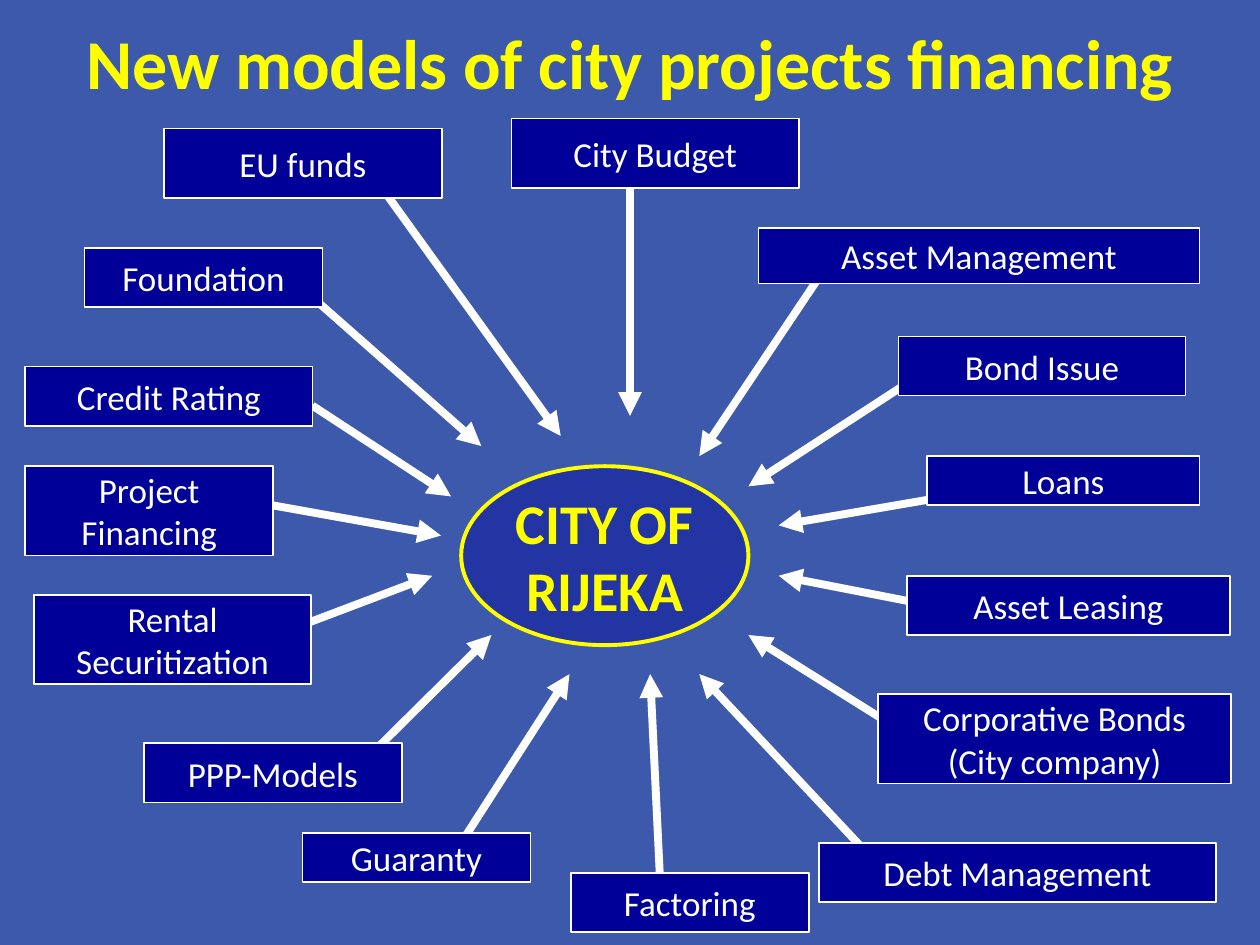
from lxml.etree import SubElement
from pptx import Presentation
from pptx.dml.color import RGBColor
from pptx.enum.shapes import MSO_CONNECTOR, MSO_SHAPE
from pptx.enum.text import MSO_ANCHOR, PP_ALIGN
from pptx.oxml.ns import qn
from pptx.util import Inches, Pt

BLUE = RGBColor(0x3D, 0x59, 0xAB)
NAVY = RGBColor(0x00, 0x00, 0x99)
WHITE = RGBColor(0xFF, 0xFF, 0xFF)
YELLOW = RGBColor(0xFF, 0xFF, 0x00)

TITLE = "New models of city projects financing"
CITY = "CITY OF\nRIJEKA"

# name, box (left, top, width, height), arrow start, arrow end
SOURCES = [
    ("City Budget", (4.06, 0.94, 2.28, 0.55), (5, 1.41), (5, 3.3)),
    ("Asset Management", (6.02, 1.81, 3.5, 0.44), (6.5, 2.2), (5.55, 3.62)),
    ("Bond Issue", (7.13, 2.67, 2.28, 0.47), (7.28, 2.99), (5.94, 3.86)),
    ("Loans", (7.36, 3.62, 2.16, 0.39), (7.52, 3.94), (6.18, 4.17)),
    ("Asset Leasing", (7.2, 4.57, 2.56, 0.47), (7.36, 4.8), (6.18, 4.57)),
    ("Corporative Bonds\n(City company)", (6.97, 5.51, 2.8, 0.71), (7.44, 5.98), (5.94, 5.04)),
    ("Debt Management", (6.5, 6.69, 3.15, 0.47), (7.05, 6.95), (5.55, 5.35)),
    ("Factoring", (4.53, 6.93, 1.89, 0.47), (5.24, 7.01), (5.16, 5.35)),
    ("Guaranty", (2.4, 6.61, 1.81, 0.39), (3.66, 6.69), (4.52, 5.35)),
    ("PPP-Models", (1.14, 5.9, 2.05, 0.47), (2.87, 6.06), (3.9, 5.04)),
    ("Rental\nSecuritization", (0.27, 4.72, 2.2, 0.71), (2.4, 4.96), (3.43, 4.57)),
    ("Project\nFinancing", (0.2, 3.7, 1.97, 0.71), (2.16, 4.01), (3.5, 4.25)),
    ("Credit Rating", (0.2, 2.91, 2.28, 0.47), (2.48, 3.22), (3.58, 3.94)),
    ("Foundation", (0.67, 1.97, 1.89, 0.47), (2.48, 2.36), (3.82, 3.54)),
    ("EU funds", (1.3, 1.02, 2.21, 0.55), (3.03, 1.49), (4.45, 3.46)),
]

HEAD = {"name": "Calibri", "size": Pt(40), "bold": True}
HUB = {"name": "Calibri", "size": Pt(32), "bold": True}
LABEL = {"name": "Calibri", "size": Pt(20), "bold": False}


def write(shape, text, style, color, wrap=False):
    frame = shape.text_frame
    frame.text = text
    frame.word_wrap = wrap
    frame.vertical_anchor = MSO_ANCHOR.MIDDLE
    for para in frame.paragraphs:
        para.alignment = PP_ALIGN.CENTER
        for key, value in style.items():
            setattr(para.font, key, value)
        para.font.color.rgb = color


def add_box(slide, kind, place, edge, width):
    shape = slide.shapes.add_shape(kind, *map(Inches, place))
    shape.shadow.inherit = False
    shape.fill.solid()
    shape.fill.fore_color.rgb = NAVY
    shape.line.color.rgb = edge
    shape.line.width = Pt(width)
    return shape


def add_arrow(slide, start, end):
    arrow = slide.shapes.add_connector(
        MSO_CONNECTOR.STRAIGHT, *map(Inches, start + end))
    arrow.line.color.rgb = WHITE
    arrow.line.width = Pt(4.5)
    SubElement(arrow.line._get_or_add_ln(), qn("a:tailEnd"), type="triangle")
    SubElement(arrow._element.spPr, qn("a:effectLst"))


def main():
    deck = Presentation()
    deck.slide_width, deck.slide_height = Inches(10), Inches(7.5)
    slide = deck.slides.add_slide(deck.slide_layouts[6])
    slide.background.fill.solid()
    slide.background.fill.fore_color.rgb = BLUE

    title = slide.shapes.add_textbox(*map(Inches, (0.5, 0.19, 9, 0.6)))
    write(title, TITLE, HEAD, YELLOW, wrap=True)

    city = add_box(slide, MSO_SHAPE.OVAL, (3.66, 3.7, 2.28, 1.42), YELLOW, 2.25)
    tint = city._element.spPr.find(qn("a:solidFill"))[0]
    SubElement(tint, qn("a:alpha"), val="41000")
    write(city, CITY, HUB, YELLOW)

    for name, place, start, end in SOURCES:
        add_arrow(slide, start, end)
    for name, place, start, end in SOURCES:
        box = add_box(slide, MSO_SHAPE.RECTANGLE, place, WHITE, 1)
        write(box, name, LABEL, WHITE)

    deck.save("out.pptx")


if __name__ == "__main__":
    main()
